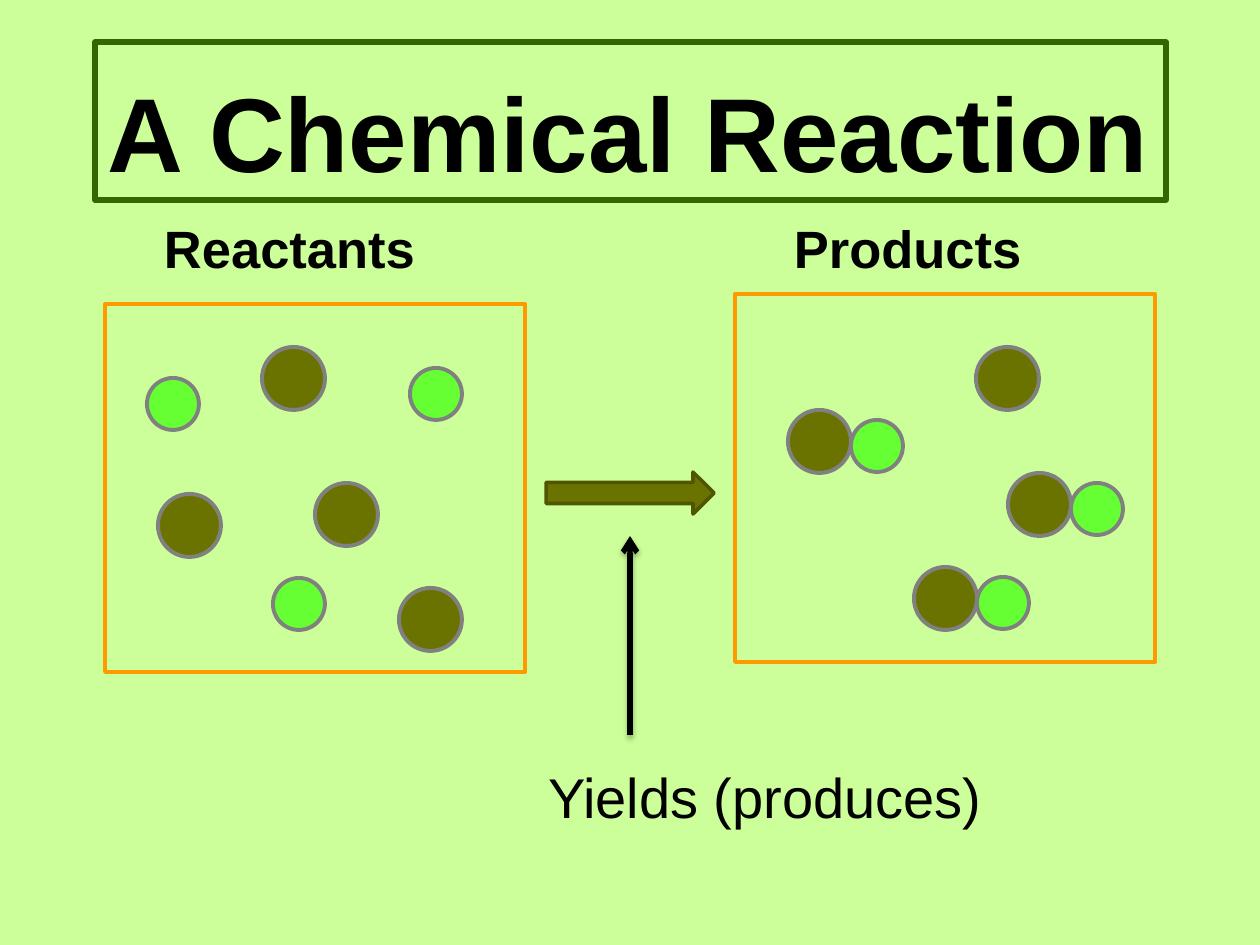
from lxml import etree
from pptx import Presentation
from pptx.dml.color import RGBColor
from pptx.enum.shapes import MSO_CONNECTOR, MSO_SHAPE
from pptx.enum.text import MSO_ANCHOR, MSO_AUTO_SIZE, PP_ALIGN
from pptx.oxml import parse_xml
from pptx.oxml.ns import nsdecls, qn
from pptx.util import Pt

RECTANGLE, OVAL, RIGHT_ARROW = MSO_SHAPE.RECTANGLE, MSO_SHAPE.OVAL, MSO_SHAPE.RIGHT_ARROW
STRAIGHT = MSO_CONNECTOR.STRAIGHT
TOP, BOTTOM = MSO_ANCHOR.TOP, MSO_ANCHOR.BOTTOM
NO_AUTOFIT = MSO_AUTO_SIZE.NONE
LEFT = PP_ALIGN.LEFT
PX = 914400 / 126

COLORS = {
    "background": "CCFF99", "text": "000000", "title_border": "336600",
    "container": "FF9900", "large_atom": "6B7300", "small_atom": "66FF33",
    "atom_border": "808080", "arrow_border": "4F5500",
}
LARGE, SMALL = 63, 52


def px(*lengths):
    return [round(length * PX) for length in lengths]


def add_figure(kind, box, fill, border, width):
    shape = slide.shapes.add_shape(kind, *px(*box))
    shape.shadow.inherit = False
    if fill:
        shape.fill.solid()
        shape.fill.fore_color.rgb = RGBColor.from_string(COLORS[fill])
    else:
        shape.fill.background()
    shape.line.color.rgb = RGBColor.from_string(COLORS[border])
    shape.line.width = Pt(width)


presentation = Presentation()
presentation.slide_width, presentation.slide_height = px(1260, 945)
slide = presentation.slides.add_slide(presentation.slide_layouts[3])
slide.background.fill.solid()
slide.background.fill.fore_color.rgb = RGBColor.from_string(COLORS["background"])

title, reactants, products = slide.placeholders
yields_label = slide.shapes.add_textbox(*px(535, 756, 462, 81))
title.line.color.rgb = RGBColor.from_string(COLORS["title_border"])
title.line.width = Pt(3)

texts = [
    (title, "A Chemical Reaction", (95, 42, 1071, 158), BOTTOM, 13, 60, True),
    (reactants, "Reactants", (95, 210, 441, 588), TOP, 69, 30, True),
    (products, "Products", (725, 210, 441, 588), TOP, 69, 30, True),
    (yields_label, "Yields (produces)", (535, 756, 462, 81), TOP, 13, 32, False),
]
for shape, text, box, anchor, margin, size, bold in texts:
    shape.left, shape.top, shape.width, shape.height = px(*box)
    frame = shape.text_frame
    frame.text = text
    margin_left, margin_top = px(margin, 6)
    frame_format = {
        "auto_size": NO_AUTOFIT, "word_wrap": True, "vertical_anchor": anchor,
        "margin_left": margin_left, "margin_top": margin_top,
    }
    for name, value in frame_format.items():
        setattr(frame, name, value)
    paragraph = frame.paragraphs[0]
    properties = paragraph._p.get_or_add_pPr()
    properties.set("marL", "0")
    properties.set("indent", "0")
    etree.SubElement(properties, qn("a:buNone"))
    paragraph.alignment = LEFT
    paragraph.space_before = Pt(0)
    font = paragraph.runs[0].font
    for name, value in {"name": "Arial", "size": Pt(size), "bold": bold}.items():
        setattr(font, name, value)
    font.color.rgb = RGBColor.from_string(COLORS["text"])

for left, top in [(105, 304), (735, 294)]:
    add_figure(RECTANGLE, (left, top, 420, 368), None, "container", 2.25)

molecules = [(788, 410), (1008, 473), (914, 567)]
large_atoms = [(262, 347), (158, 494), (315, 483), (399, 588), (976, 347)] + molecules
small_atoms = [(147, 378), (410, 368), (273, 578)]
small_atoms += [(left + LARGE, top + 10) for left, top in molecules]
for atoms, diameter, fill in [(large_atoms, LARGE, "large_atom"), (small_atoms, SMALL, "small_atom")]:
    for left, top in atoms:
        add_figure(OVAL, (left, top, diameter, diameter), fill, "atom_border", 2.25)

add_figure(RIGHT_ARROW, (546, 472, 168, 42), "large_atom", "arrow_border", 2)

pointer = slide.shapes.add_connector(STRAIGHT, *px(630, 735, 630, 536))
pointer.line.color.rgb = RGBColor.from_string(COLORS["text"])
pointer.line.width = Pt(3)
etree.SubElement(pointer.line._get_or_add_ln(), qn("a:tailEnd"), type="arrow")
pointer._element.spPr.append(parse_xml(
    f'<a:effectLst {nsdecls("a")}>'
    '<a:outerShdw blurRad="40000" dist="23000" dir="5400000" rotWithShape="0">'
    f'<a:srgbClr val="{COLORS["text"]}"><a:alpha val="35000"/></a:srgbClr>'
    '</a:outerShdw></a:effectLst>'))

presentation.save("out.pptx")
